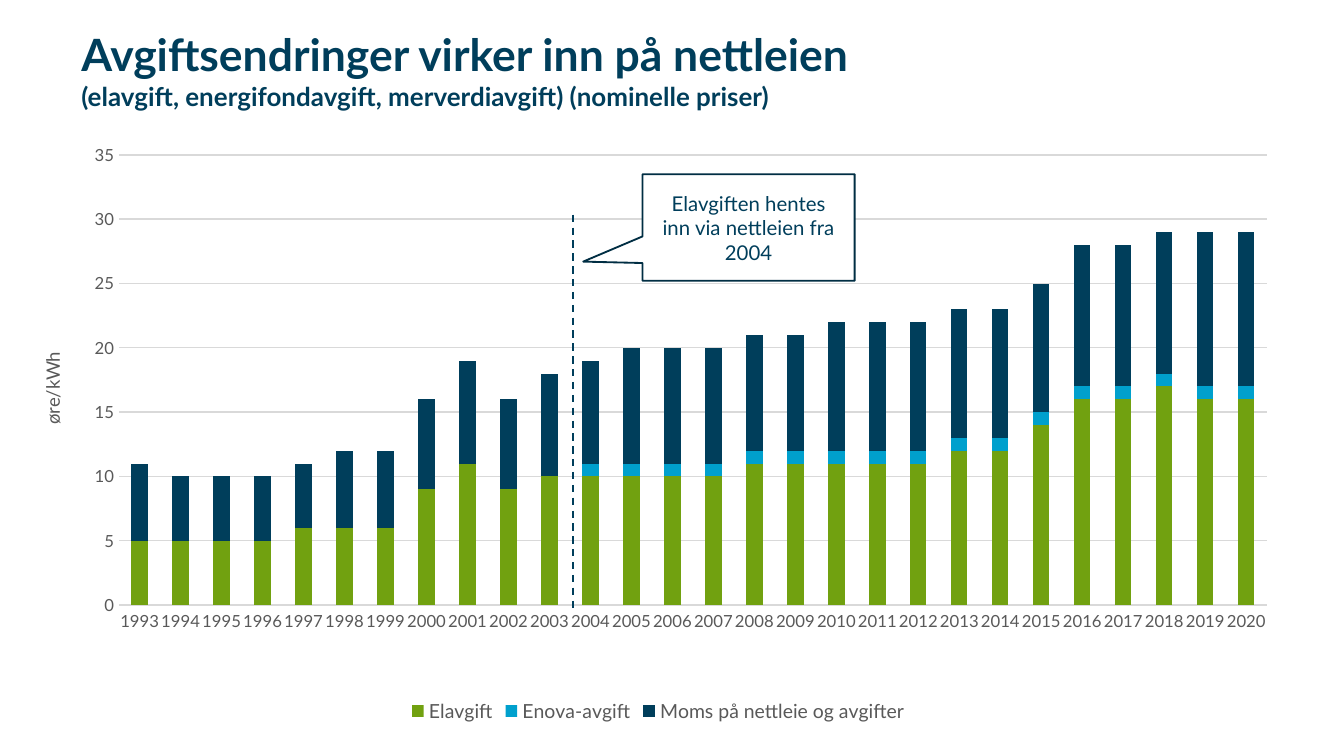
import pptx
import pptx.chart.data
import pptx.dml.color
import pptx.enum.chart
import pptx.enum.dml
import pptx.enum.shapes
import pptx.enum.text
import pptx.oxml
import pptx.oxml.ns
import pptx.util
from pptx.dml.color import RGBColor
from pptx.util import Cm, Pt

NAVY = RGBColor(0x00, 0x3E, 0x5B)
DARK_NAVY = RGBColor(0x00, 0x2E, 0x43)
GREEN = RGBColor(0x71, 0xA1, 0x10)
CYAN = RGBColor(0x00, 0xA0, 0xCD)
WHITE = RGBColor(0xFF, 0xFF, 0xFF)
GREY = RGBColor(0x59, 0x59, 0x59)
LIGHT_GREY = RGBColor(0xD9, 0xD9, 0xD9)

YEARS = [str(year) for year in range(1993, 2021)]
# Whole øre per kWh, as on the value axis
CHARGES = [
    ("Elavgift", GREEN,
     [5, 5, 5, 5, 6, 6, 6, 9, 11, 9, 10, 10, 10, 10,
      10, 11, 11, 11, 11, 11, 12, 12, 14, 16, 16, 17, 16, 16]),
    ("Enova-avgift", CYAN, [0] * 11 + [1] * 17),
    ("Moms på nettleie og avgifter", NAVY,
     [6, 5, 5, 5, 5, 6, 6, 7, 8, 7, 8, 8, 9, 9,
      9, 9, 9, 10, 10, 10, 10, 10, 10, 11, 11, 11, 12, 12]),
]


def set_layout(parent, index, box, target=None, **lengths):
    """Place a chart part by its lengths inside the chart's box."""
    for old in parent.findall(pptx.oxml.ns.qn("c:layout")):
        parent.remove(old)
    _, _, width, height = box
    inner = f'<c:layoutTarget val="{target}"/>' if target else ""
    inner += '<c:xMode val="edge"/><c:yMode val="edge"/>'
    for key, length in lengths.items():
        fraction = length / (width if key in "xw" else height)
        inner += f'<c:{key} val="{fraction:.4f}"/>'
    parent.insert(index, pptx.oxml.parse_xml(
        f'<c:layout {pptx.oxml.ns.nsdecls("c")}>'
        f"<c:manualLayout>{inner}</c:manualLayout></c:layout>"))


class SlideBuilder:
    font_name = "Lato"

    def __init__(self, slide):
        self.slide = slide

    def style(self, font, size, color, bold=False):
        font.name = self.font_name
        font.size = Pt(size)
        font.bold = bold
        font.color.rgb = color

    def add_run(self, paragraph, text, size, color, bold=False):
        run = paragraph.add_run()
        run.text = text
        self.style(run.font, size, color, bold)

    def title(self, box, heading, subheading):
        title = self.slide.shapes.title
        title.left, title.top, title.width, title.height = box
        frame = title.text_frame
        frame.margin_left = frame.margin_top = frame.margin_right = frame.margin_bottom = 0
        frame.vertical_anchor = pptx.enum.text.MSO_ANCHOR.TOP
        frame.auto_size = pptx.enum.text.MSO_AUTO_SIZE.NONE
        frame.word_wrap = True
        paragraph = frame.paragraphs[0]
        paragraph.alignment = pptx.enum.text.PP_ALIGN.LEFT
        self.add_run(paragraph, heading, 24, NAVY, bold=True)
        paragraph.add_line_break()
        self.add_run(paragraph, subheading, 14, NAVY, bold=True)

    def stacked_chart(self, box, categories, charges, unit):
        data = pptx.chart.data.CategoryChartData()
        data.categories = categories
        for name, _, values in charges:
            data.add_series(name, values)
        chart = self.slide.shapes.add_chart(
            pptx.enum.chart.XL_CHART_TYPE.COLUMN_STACKED, *box, data).chart
        self.style(chart.font, 10, GREY)
        chart.has_title = False

        plot = chart.plots[0]
        plot.gap_width = 150
        plot.overlap = 100
        plot.vary_by_categories = False
        for series, (_, color, _) in zip(plot.series, charges):
            series.format.fill.solid()
            series.format.fill.fore_color.rgb = color
        set_layout(chart._chartSpace.chart.plotArea, 0, box, "inner",
                   x=Cm(1.73), y=Cm(0.41), w=Cm(21.86), h=Cm(8.58))

        years, prices = chart.category_axis, chart.value_axis
        for axis in (years, prices):
            axis.major_tick_mark = axis.minor_tick_mark = pptx.enum.chart.XL_TICK_MARK.NONE
            self.style(axis.tick_labels.font, 9, GREY)
        # Automatic label rotation keeps the years horizontal
        years._element.txPr.bodyPr.set("rot", "-60000000")
        prices.minimum_scale, prices.maximum_scale, prices.major_unit = 0, 35, 5
        prices.format.line.fill.background()
        for rule in (years.format.line, prices.major_gridlines.format.line):
            rule.color.rgb = LIGHT_GREY
            rule.width = Pt(0.75)

        caption = prices.axis_title
        self.add_run(caption.text_frame.paragraphs[0], unit, 10, GREY)
        caption.text_frame._txBody.bodyPr.set("rot", "-5400000")
        caption.text_frame._txBody.bodyPr.set("vert", "horz")
        set_layout(caption._element, 1, box, x=Cm(0.15), y=Cm(4.1))

        chart.has_legend = True
        chart.legend.position = pptx.enum.chart.XL_LEGEND_POSITION.BOTTOM
        chart.legend.include_in_layout = False
        self.style(chart.legend.font, 10.5, GREY)

    def dashed_line(self, x, top, bottom):
        line = self.slide.shapes.add_connector(
            pptx.enum.shapes.MSO_CONNECTOR.STRAIGHT, x, top, x, bottom)
        line.line.color.rgb = NAVY
        line.line.width = Pt(1)
        line.line.dash_style = pptx.enum.dml.MSO_LINE.DASH
        line._element.spPr.append(pptx.oxml.parse_xml(
            f'<a:effectLst {pptx.oxml.ns.nsdecls("a")}/>'))

    def callout(self, box, tip, text):
        callout = self.slide.shapes.add_shape(
            pptx.enum.shapes.MSO_SHAPE.RECTANGULAR_CALLOUT, *box)
        callout.shadow.inherit = False
        callout.adjustments[0], callout.adjustments[1] = tip
        callout.fill.solid()
        callout.fill.fore_color.rgb = WHITE
        callout.line.color.rgb = DARK_NAVY
        callout.line.width = Pt(1)
        frame = callout.text_frame
        frame.word_wrap = True
        frame.vertical_anchor = pptx.enum.text.MSO_ANCHOR.MIDDLE
        frame.paragraphs[0].alignment = pptx.enum.text.PP_ALIGN.CENTER
        self.add_run(frame.paragraphs[0], text, 11, NAVY)


def main():
    deck = pptx.Presentation()
    deck.slide_width, deck.slide_height = Cm(25.6), Cm(14.4)
    title_only = deck.slide_layouts[5]
    builder = SlideBuilder(deck.slides.add_slide(title_only))

    # Charges per year
    builder.stacked_chart((Cm(0.54), Cm(2.54), Cm(24), Cm(11.33)),
                          YEARS, CHARGES, "øre/kWh")

    # Heading
    builder.title((Cm(1.55), Cm(0.52), Cm(21.59), Cm(1.63)),
                  "Avgiftsendringer virker inn på nettleien",
                  "(elavgift, energifondavgift, merverdiavgift) (nominelle priser)")

    # Change of collection in 2004
    builder.dashed_line(Cm(10.91), Cm(4.09), Cm(11.63))
    builder.callout((Cm(12.24), Cm(3.32), Cm(4.04), Cm(2.03)), (-0.78, 0.32),
                    "Elavgiften hentes inn via nettleien fra 2004")

    deck.save("out.pptx")


if __name__ == "__main__":
    main()
